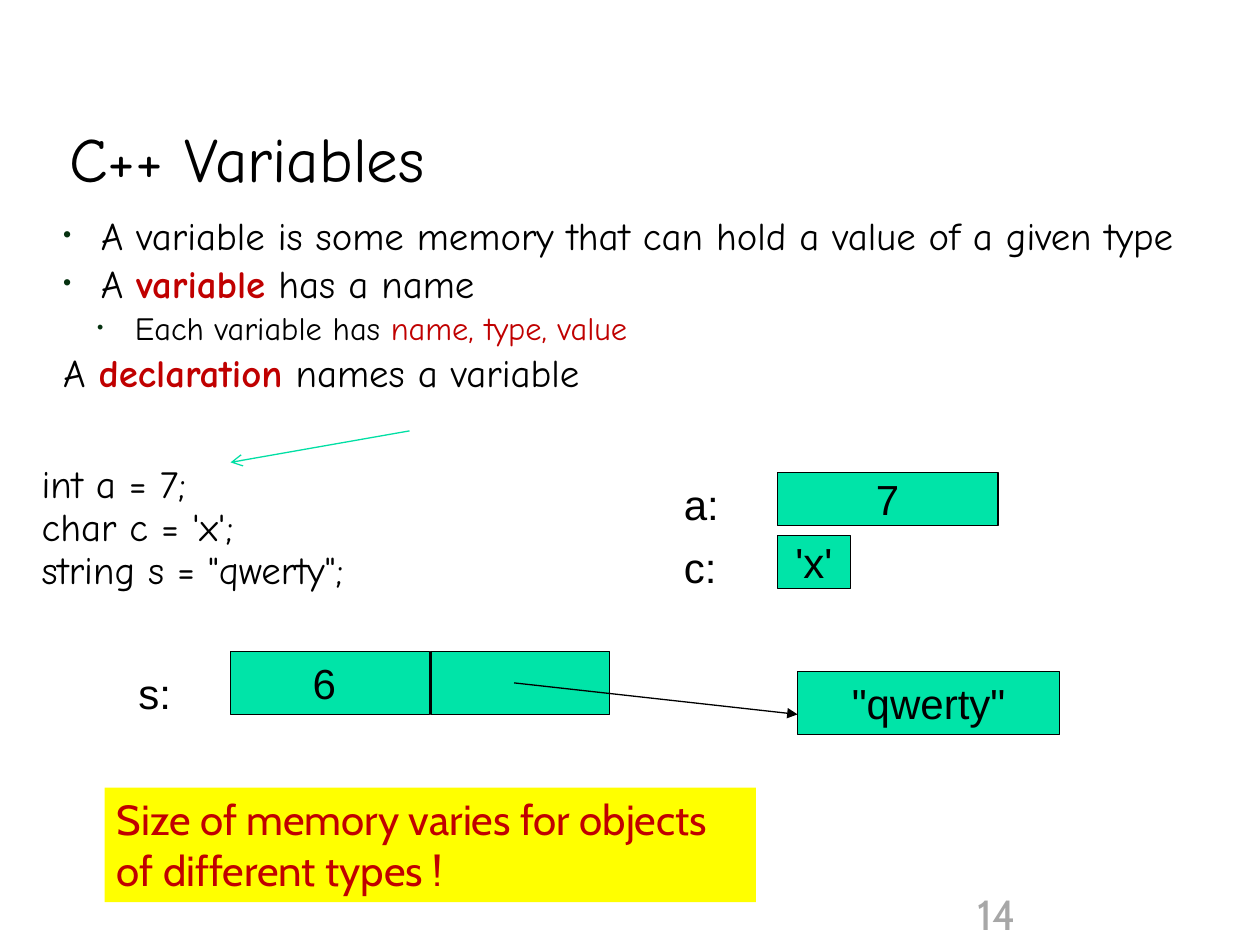
from lxml.etree import SubElement
from pptx import Presentation
from pptx.dml.color import RGBColor
from pptx.enum.shapes import MSO_CONNECTOR, MSO_SHAPE
from pptx.enum.text import MSO_ANCHOR, PP_ALIGN
from pptx.oxml.ns import qn
from pptx.util import Inches, Pt

COLORS = {
    "text": "000000",
    "accent": "C00000",
    "bullet": "05310F",
    "cell": "00E4A8",
    "pointer": "00DFA4",
    "note": "FFFF00",
    "number": "A7A7A7",
}


def rgb(name):
    return RGBColor.from_string(COLORS[name])


def write(para, text, size=24, font="Arial", color="text", bold=False):
    span = para.add_run()
    span.text = text
    span.font.size = Pt(size)
    span.font.name = font
    span.font.color.rgb = rgb(color)
    span.font.bold = bold


class SlideBuilder:
    heading_font = "Comic Neue"
    note_font = "Cabin"
    line_width = Pt(0.75)

    def __init__(self, page):
        self.page = page

    def text_box(self, left, top, width, height, inset=None, anchor=MSO_ANCHOR.TOP, wrap=True):
        box = self.page.shapes.add_textbox(*map(Inches, (left, top, width, height)))
        frame = box.text_frame
        frame.word_wrap = wrap
        frame.vertical_anchor = anchor
        if inset is not None:
            frame.margin_left = frame.margin_right = Inches(inset)
            frame.margin_top = frame.margin_bottom = Inches(inset)
        return frame

    def label(self, text, left, top, width, height, inset=None,
              anchor=MSO_ANCHOR.TOP, wrap=True, **style):
        frame = self.text_box(left, top, width, height, inset, anchor, wrap)
        write(frame.paragraphs[0], text, **style)

    def body(self, left, top, width, height, items, spacing):
        frame = self.text_box(left, top, width, height, inset=0)
        for index, (level, bullet_size, spans) in enumerate(items):
            para = frame.add_paragraph() if index else frame.paragraphs[0]
            para.level = level
            para.line_spacing = spacing
            para.space_before = Pt(6)
            self.indent(para, 0.3 + 0.27 * level, bullet_size)
            for text, style in spans:
                write(para, text, size=18.5 if level else 22.2, font=self.heading_font, **style)

    def indent(self, para, margin, bullet_size):
        properties = para._p.get_or_add_pPr()
        properties.set("marL", str(Inches(margin)))
        properties.set("indent", str(Inches(-0.3)))
        if not bullet_size:
            SubElement(properties, qn("a:buNone"))
            return
        color = SubElement(properties, qn("a:buClr"))
        SubElement(color, qn("a:srgbClr"), val=COLORS["bullet"])
        SubElement(properties, qn("a:buSzPct"), val=str(bullet_size * 1000))
        SubElement(properties, qn("a:buFont"), typeface="Arial")
        SubElement(properties, qn("a:buChar"), char="•")

    def rectangle(self, left, top, width, height, fill):
        shape = self.page.shapes.add_shape(
            MSO_SHAPE.RECTANGLE, *map(Inches, (left, top, width, height)))
        shape.shadow.inherit = False
        shape.fill.solid()
        shape.fill.fore_color.rgb = rgb(fill)
        return shape

    def memory_cell(self, text, left, top, width, height):
        shape = self.rectangle(left, top, width, height, "cell")
        shape.line.color.rgb = rgb("text")
        shape.line.width = self.line_width
        if text:
            frame = shape.text_frame
            frame.word_wrap = False
            frame.vertical_anchor = MSO_ANCHOR.MIDDLE
            para = frame.paragraphs[0]
            para.alignment = PP_ALIGN.CENTER
            write(para, text)

    def note(self, lines, left, top, width, height):
        shape = self.rectangle(left, top, width, height, "note")
        shape.line.fill.background()
        frame = shape.text_frame
        frame.word_wrap = True
        frame.vertical_anchor = MSO_ANCHOR.TOP
        for index, text in enumerate(lines):
            para = frame.add_paragraph() if index else frame.paragraphs[0]
            para.alignment = PP_ALIGN.LEFT
            write(para, text, font=self.note_font, color="accent")

    def arrow(self, start, end, color, head):
        connector = self.page.shapes.add_connector(
            MSO_CONNECTOR.STRAIGHT, *map(Inches, start + end))
        connector.line.color.rgb = rgb(color)
        connector.line.width = self.line_width
        SubElement(connector.line._get_or_add_ln(), qn("a:tailEnd"), type=head)
        SubElement(connector._element.spPr, qn("a:effectLst"))


def main():
    deck = Presentation()
    deck.slide_width, deck.slide_height = Inches(10), Inches(7.5)
    builder = SlideBuilder(deck.slides.add_slide(deck.slide_layouts[6]))

    builder.label("C++ Variables", 0.5, 0.35, 7.92, 1.25, inset=0.05,
                  anchor=MSO_ANCHOR.BOTTOM, size=36, font=builder.heading_font)

    red = {"color": "accent"}
    key_term = {"color": "accent", "bold": True}
    builder.body(0.5, 1.75, 9.25, 1.83, [
        (0, 60, [("A variable is some memory that can hold a value of a given type", {})]),
        (0, 60, [("A ", {}), ("variable", key_term), (" has a name", {})]),
        (1, 55, [("Each variable has ", {}), ("name, type, value", red)]),
        (0, None, [("A ", {}), ("declaration", key_term), (" names a variable", {})]),
    ], spacing=0.8)

    declarations = ["int a = 7;", "char c = 'x';", 'string s = "qwerty";']
    builder.body(0.33, 3.75, 4.75, 3.53,
                 [(0, None, [(line, {})]) for line in declarations], spacing=0.7)

    builder.label("14", 7.71, 7.02, 0.48, 0.48, inset=0.05, anchor=MSO_ANCHOR.BOTTOM,
                  wrap=False, font=builder.note_font, color="number")

    for text, left, top, width, height in [
        ("7", 6.17, 3.75, 1.75, 0.42),
        ("'x'", 6.17, 4.25, 0.58, 0.42),
        ("", 3.42, 5.17, 1.42, 0.5),
        ('"qwerty"', 6.33, 5.33, 2.08, 0.5),
        ("6 ", 1.83, 5.17, 1.58, 0.5),
    ]:
        builder.memory_cell(text, left, top, width, height)
    builder.arrow((4.08, 5.42), (6.33, 5.67), "text", "triangle")

    for name, left, top in [("a:", 5.33, 3.75), ("s:", 1, 5.25), ("c:", 5.33, 4.25)]:
        builder.label(name, left, top, 0.67, 0.4)

    builder.note(["Size of memory varies for objects", "of different types !"],
                 0.83, 6.25, 5.17, 0.91)
    builder.arrow((3.25, 3.42), (1.83, 3.67), "pointer", "arrow")

    deck.save("out.pptx")


if __name__ == "__main__":
    main()
